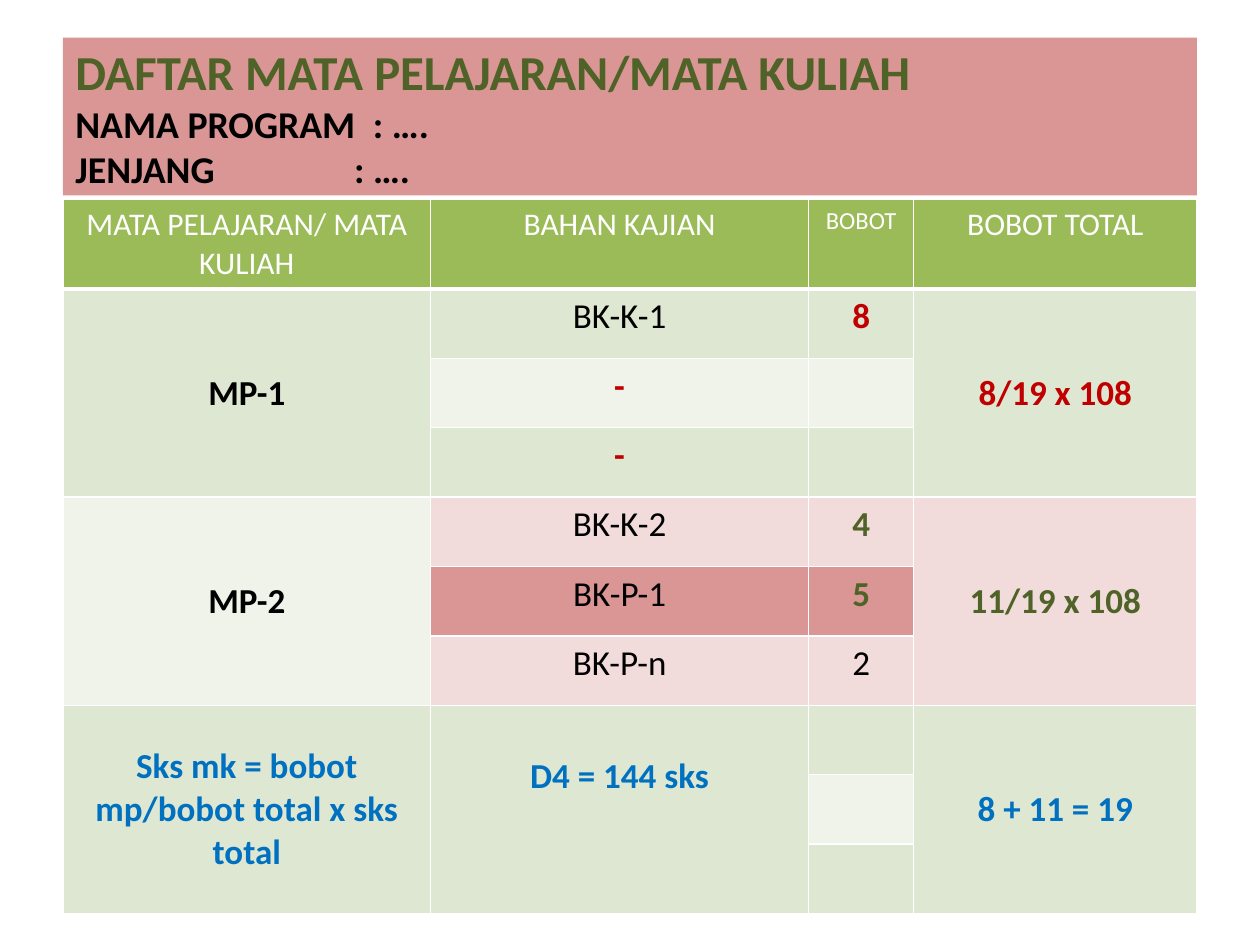
from dataclasses import dataclass
from typing import Any

from lxml.etree import SubElement
from pptx import Presentation
from pptx.dml.color import RGBColor
from pptx.enum.shapes import MSO_SHAPE as Shape
from pptx.enum.text import MSO_ANCHOR as Anchor, PP_ALIGN as Align
from pptx.oxml.ns import qn
from pptx.util import Cm, Pt

COLORS = {
    "white": "FFFFFF", "black": "000000", "green": "9BBB59", "moss": "4F6228",
    "sage": "DEE7D1", "mist": "EFF3EA", "rose": "D99694", "blush": "F2DCDB",
    "red": "C00000", "blue": "0070C0",
}
HEADERS = [("MATA PELAJARAN/ MATA KULIAH", 18), ("BAHAN KAJIAN", 18),
           ("BOBOT", 14), ("BOBOT TOTAL", 18)]
TITLE_LINES = [
    ("DAFTAR MATA PELAJARAN/MATA KULIAH", 27.9, "moss", None),
    ("NAMA PROGRAM\t: ….", 21.6, "black", 6),
    ("JENJANG\t: ….", 21.6, "black", 5.62),
]
GROUPS = [
    (("MP-1", "black", "sage"), ("8/19 x 108", "red", "sage")),
    (("MP-2", "black", "mist"), ("11/19 x 108", "moss", "blush")),
    (("Sks mk = bobot mp/bobot total x sks total", "blue", "sage"),
     ("8 + 11 = 19", "blue", "sage")),
]
DETAILS = [
    (("BK-K-1", "black", False), ("8", "red", True), "sage"),
    (("-", "red", True), None, "mist"),
    (("-", "red", True), None, "sage"),
    (("BK-K-2", "black", False), ("4", "moss", True), "blush"),
    (("BK-P-1", "black", False), ("5", "moss", True), "rose"),
    (("BK-P-n", "black", False), ("2", "black", False), "blush"),
    (None, None, "sage"),
    (None, None, "mist"),
    (None, None, "sage"),
]
GROUP_ROWS = 3


@dataclass
class SlideBuilder:
    """Hold the style and the current slide, and add its elements."""
    slide: Any
    font: str = "Calibri"
    size: float = 20

    def color(self, name):
        return RGBColor.from_string(COLORS[name])

    def run(self, paragraph, text, color, size=None, bold=False):
        run = paragraph.add_run()
        run.text = text
        run.font.name = self.font
        run.font.size = Pt(size or self.size)
        run.font.bold = bold
        run.font.color.rgb = self.color(color)

    def banner(self, left, top, width, height, lines, fill):
        shape = self.slide.shapes.add_shape(
            Shape.RECTANGLE, Cm(left), Cm(top), Cm(width), Cm(height))
        shape.shadow.inherit = False
        shape.fill.solid()
        shape.fill.fore_color.rgb = self.color(fill)
        shape.line.fill.background()
        frame = shape.text_frame
        frame.word_wrap = True
        frame.vertical_anchor = Anchor.MIDDLE
        for index, (text, size, color, stop) in enumerate(lines):
            paragraph = frame.add_paragraph() if index else frame.paragraphs[0]
            paragraph.alignment = Align.LEFT
            self.run(paragraph, text, color, size, True)
            if stop:
                tabs = SubElement(paragraph._p.get_or_add_pPr(), qn("a:tabLst"))
                SubElement(tabs, qn("a:tab"), pos=str(Cm(stop)), algn="l")

    def table(self, left, top, widths, heights):
        table = self.slide.shapes.add_table(
            len(heights), len(widths), Cm(left), Cm(top),
            Cm(sum(widths)), Cm(sum(heights))).table
        for column, width in zip(table.columns, widths):
            column.width = Cm(width)
        for row, height in zip(table.rows, heights):
            row.height = Cm(height)
        return table

    def borders(self, cell, bottom):
        properties = cell._tc.get_or_add_tcPr()
        for side, width in (("L", 1), ("R", 1), ("T", 1), ("B", bottom)):
            line = SubElement(properties, qn(f"a:ln{side}"), w=str(Pt(width)))
            fill = SubElement(line, qn("a:solidFill"))
            SubElement(fill, qn("a:srgbClr"), val=COLORS["white"])

    def cell(self, cell, fill, content=None, size=None, anchor=Anchor.TOP, bottom=1):
        self.borders(cell, bottom)
        cell.fill.solid()
        cell.fill.fore_color.rgb = self.color(fill)
        cell.vertical_anchor = anchor
        if content:
            text, color, bold = content
            paragraph = cell.text_frame.paragraphs[0]
            paragraph.alignment = Align.CENTER
            self.run(paragraph, text, color, size, bold)


def main():
    presentation = Presentation()
    presentation.slide_width, presentation.slide_height = Cm(25.4), Cm(19.05)
    builder = SlideBuilder(presentation.slides.add_slide(presentation.slide_layouts[6]))
    builder.banner(1.27, 0.76, 22.86, 3.18, TITLE_LINES, "rose")

    table = builder.table(1.27, 4.02, [7.41, 7.62, 2.12, 5.71],
                          [1.8] + [1.4] * len(DETAILS))
    for column, (text, size) in enumerate(HEADERS):
        builder.cell(table.cell(0, column), "green", (text, "white", False), size, bottom=3)
    for row, (material, weight, fill) in enumerate(DETAILS, 1):
        builder.cell(table.cell(row, 1), fill, material)
        builder.cell(table.cell(row, 2), fill, weight)
    for index, group in enumerate(GROUPS):
        first = 1 + index * GROUP_ROWS
        for column, (text, color, fill) in zip((0, 3), group):
            for row in range(first, first + GROUP_ROWS):
                content = (text, color, True) if row == first else None
                builder.cell(table.cell(row, column), fill, content, anchor=Anchor.MIDDLE)
            table.cell(first, column).merge(table.cell(first + GROUP_ROWS - 1, column))

    last = len(DETAILS)
    total = table.cell(last - GROUP_ROWS + 1, 1)
    total.merge(table.cell(last, 1))
    total.margin_top = Cm(1)
    paragraph = total.text_frame.paragraphs[0]
    paragraph.alignment = Align.CENTER
    builder.run(paragraph, "D4 = 144 sks", "blue", bold=True)
    presentation.save("out.pptx")


if __name__ == "__main__":
    main()
